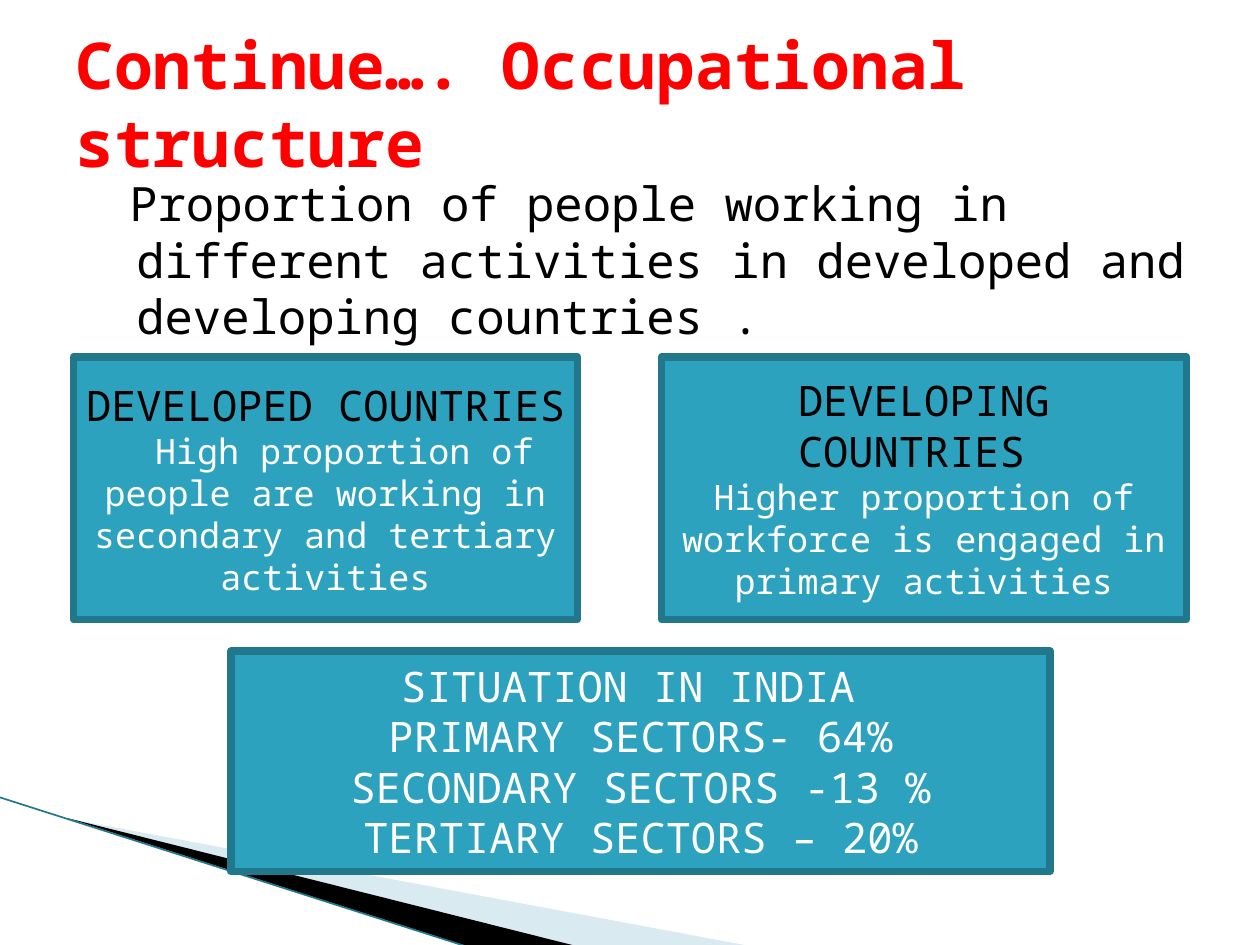
from pptx import Presentation
from pptx.dml.color import RGBColor
from pptx.enum.shapes import MSO_CONNECTOR, MSO_SHAPE
from pptx.enum.text import MSO_ANCHOR, PP_ALIGN
from pptx.oxml.ns import qn
from pptx.util import Pt
from lxml import etree

STRAIGHT = MSO_CONNECTOR.STRAIGHT
RECT = MSO_SHAPE.RECTANGLE
MIDDLE, TOP = MSO_ANCHOR.MIDDLE, MSO_ANCHOR.TOP
CENTER = PP_ALIGN.CENTER

FONT = "Noto Sans Mono"
BLACK = RGBColor(0x00, 0x00, 0x00)
WHITE = RGBColor(0xFF, 0xFF, 0xFF)
RED = RGBColor(0xFF, 0x00, 0x00)
TEAL = RGBColor(0x2D, 0xA2, 0xBF)
DARK_TEAL = RGBColor(0x21, 0x78, 0x8D)
PALE_BLUE = RGBColor(0xA0, 0xCB, 0xDC)


def add_wedge(s, points, color, alpha=None):
    start, *rest = [(Pt(x), Pt(y)) for x, y in points]
    builder = s.shapes.build_freeform(*start)
    builder.add_line_segments(rest, close=True)
    sp = builder.convert_to_shape()
    sp.shadow.inherit = False
    sp.line.fill.background()
    sp.fill.solid()
    sp.fill.fore_color.rgb = color
    if alpha is not None:
        clr = sp._element.spPr.find(qn("a:solidFill"))[0]
        etree.SubElement(clr, qn("a:alpha"), val=str(alpha * 1000))


def add_edge(s, x1, y1, x2, y2):
    line = s.shapes.add_connector(STRAIGHT, Pt(x1), Pt(y1), Pt(x2), Pt(y2))
    line.line.color.rgb = DARK_TEAL
    line.line.width = Pt(0.95)
    etree.SubElement(line._element.spPr, qn("a:effectLst"))


def style(p, size, color, bold=False):
    p.font.name = FONT
    p.font.size = Pt(size)
    p.font.bold = bold
    p.font.color.rgb = color


def set_indent(p, left, first):
    pPr = p._p.get_or_add_pPr()
    pPr.set("marL", str(Pt(left)))
    pPr.set("indent", str(Pt(first)))


def add_text(s, x, y, w, h, text, size, color, bold=False, anchor=TOP):
    tf = s.shapes.add_textbox(Pt(x), Pt(y), Pt(w), Pt(h)).text_frame
    tf.word_wrap = True
    tf.vertical_anchor = anchor
    p = tf.paragraphs[0]
    p.text = text
    style(p, size, color, bold)
    return p


def add_panel(s, x, y, w, h, lines):
    sp = s.shapes.add_shape(RECT, Pt(x), Pt(y), Pt(w), Pt(h))
    sp.shadow.inherit = False
    sp.fill.solid()
    sp.fill.fore_color.rgb = TEAL
    sp.line.color.rgb = DARK_TEAL
    sp.line.width = Pt(4.33)
    tf = sp.text_frame
    tf.word_wrap = True
    tf.vertical_anchor = MIDDLE
    for i, (text, size, color) in enumerate(lines):
        p = tf.add_paragraph() if i else tf.paragraphs[0]
        p.text = text
        p.alignment = CENTER
        style(p, size, color)
    return tf


def main():
    prs = Presentation()
    prs.slide_width, prs.slide_height = Pt(720), Pt(540)
    s = prs.slides.add_slide(prs.slide_layouts[6])

    add_wedge(s, [(39.6, 468), (428, 540.5), (328, 540.5)], PALE_BLUE, 40)
    add_wedge(s, [(38.5, 467.5), (329, 540.5), (268, 541)], BLACK)
    add_edge(s, -0.5, 455.5, 267, 541)

    p = add_text(s, 42, 96, 648, 414,
                 " Proportion of people working in different activities "
                 "in developed and developing countries .", 27, BLACK)
    set_indent(p, 28.8, -20.16)
    add_text(s, 36, 21.6, 648, 74, "Continue…. Occupational structure",
             36.9, RED, bold=True, anchor=MIDDLE)

    developed = add_panel(s, 42, 204, 288, 150, [
        ("DEVELOPED COUNTRIES", 24, BLACK),
        ("High proportion of people are working in secondary "
         "and tertiary activities", 20, WHITE)])
    set_indent(developed.paragraphs[1], 0, 21.6)
    add_panel(s, 378, 204, 300, 150, [
        ("DEVELOPING COUNTRIES ", 24, BLACK),
        ("Higher proportion of workforce is engaged in primary activities",
         20, WHITE)])
    india = ["SITUATION IN INDIA ", "PRIMARY SECTORS- 64%",
             "SECONDARY SECTORS -13 %", "TERTIARY SECTORS – 20%"]
    add_panel(s, 132, 372, 468, 126, [(text, 24, WHITE) for text in india])

    prs.save("out.pptx")


if __name__ == "__main__":
    main()
